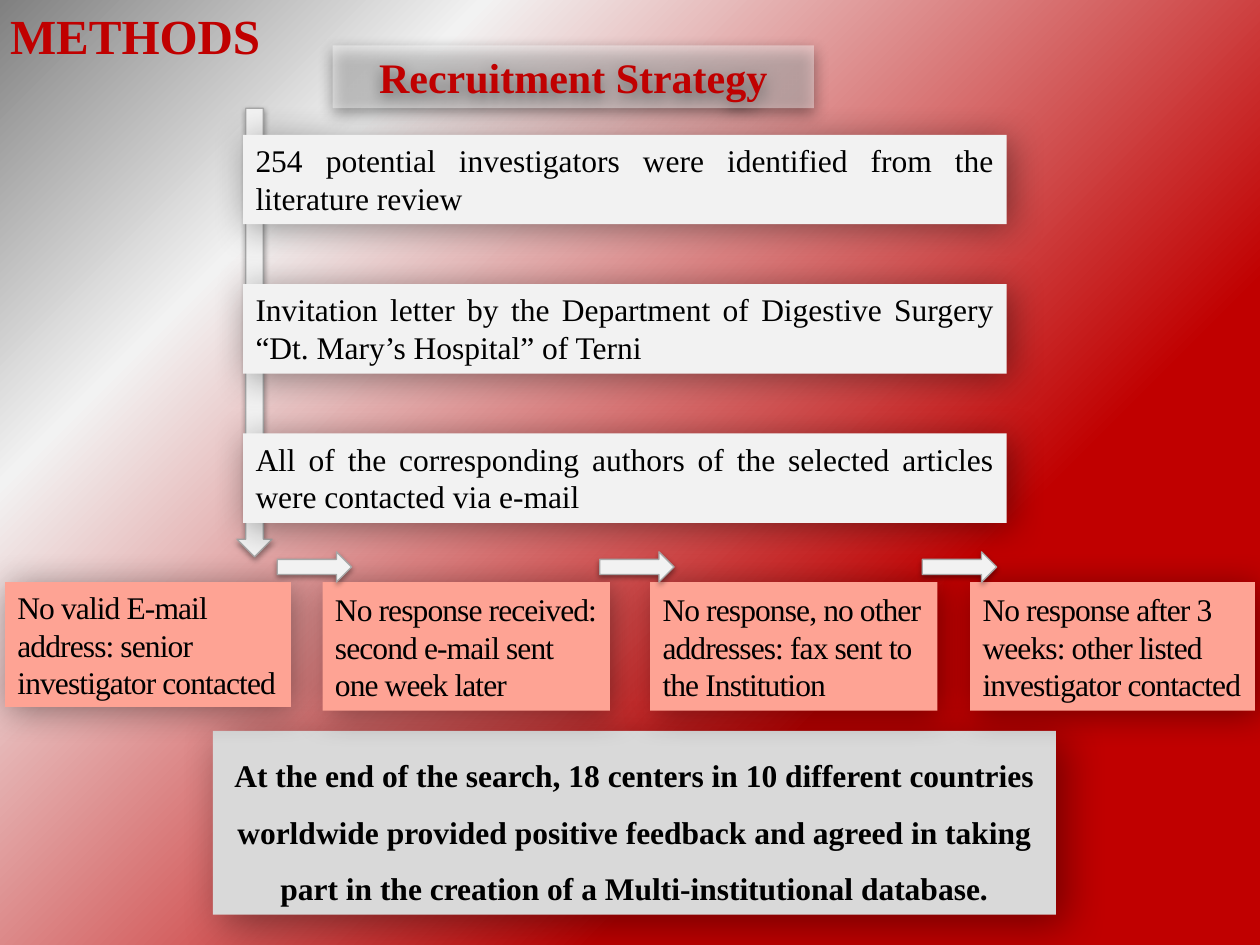
import copy
import pptx
import pptx.dml.color
import pptx.enum.shapes
import pptx.enum.text
import pptx.oxml
import pptx.oxml.ns
import pptx.util
from pptx.util import Inches

RGB = pptx.dml.color.RGBColor.from_string
SHAPE = pptx.enum.shapes.MSO_SHAPE
ALIGN = pptx.enum.text.PP_ALIGN
ANCHOR = pptx.enum.text.MSO_ANCHOR
qn = pptx.oxml.ns.qn

THEME = {
    "font": "Times New Roman",
    "red": "C00000", "ink": "000000", "light": "F2F2F2", "grey": "D9D9D9",
    "salmon": "FEA394", "white": "FFFFFF", "outline": "A6A6A6", "dark": "808080",
    "title": 28, "heading": 24, "body": 18,
}


def add_box(kind, box, fill, shadow, line=None):
    """Add a filled shape; shadow is (opacity %, blur pt, distance pt, angle)."""
    sp = s.shapes.add_shape(kind, *(Inches(v) for v in box))
    sp.fill.solid()
    sp.fill.fore_color.rgb = RGB(THEME[fill])
    if line:
        sp.line.color.rgb = RGB(THEME[line])
        sp.line.width = pptx.util.Pt(0.75)
    else:
        sp.line.fill.background()
    sp.shadow.inherit = False
    alpha, blur, dist, angle = shadow
    effects = sp._element.spPr.find(qn("a:effectLst"))
    effects.append(pptx.oxml.parse_xml(
        f'<a:outerShdw {pptx.oxml.ns.nsdecls("a")} blurRad="{pptx.util.Pt(blur)}" '
        f'dist="{pptx.util.Pt(dist)}" dir="{angle * 60000}" algn="tl" rotWithShape="0">'
        f'<a:srgbClr val="{THEME["ink"]}"><a:alpha val="{alpha * 1000}"/></a:srgbClr>'
        '</a:outerShdw>'))
    return sp


def write(sp, text, size="body", color="ink", bold=False, align=ALIGN.LEFT,
          anchor=ANCHOR.MIDDLE):
    tf = sp.text_frame
    tf.text = text
    tf.word_wrap = True
    tf.vertical_anchor = anchor
    p = tf.paragraphs[0]
    p.alignment = align
    r = p.runs[0]
    r.font.name = THEME["font"]
    r.font.size = pptx.util.Pt(THEME[size])
    r.font.bold = bold
    r.font.color.rgb = RGB(THEME[color])
    return p


prs = pptx.Presentation()
prs.slide_width, prs.slide_height = Inches(10), Inches(7.5)
s = prs.slides.add_slide(prs.slide_layouts[5])

# Diagonal background: red at bottom right, grey at top left
bg = s.background.fill
bg.gradient()
bg.gradient_angle = 135
stops = s._element.find(".//" + qn("a:gsLst"))
stops.append(copy.deepcopy(stops[0]))
for stop, (position, color) in zip(
        bg.gradient_stops, [(0.30, "red"), (0.78, "light"), (1, "dark")]):
    stop.position = position
    stop.color.rgb = RGB(THEME[color])

BOX_SHADOW = (40, 20, 3, 45)
ARROW_SHADOW = (38, 3.1, 1.6, 90)

# Long downward arrow behind the steps
down = add_box(SHAPE.RIGHT_ARROW, (0.24, 2.5, 3.56, 0.28), "light", ARROW_SHADOW, "outline")
down.rotation = 90

# Conclusion
sp = add_box(SHAPE.RECTANGLE, (1.69, 5.8, 6.69, 1.46), "grey", (40, 25, 8, 45))
p = write(sp, "At the end of the search, 18 centers in 10 different countries worldwide "
          "provided positive feedback and agreed in taking part in the creation of a "
          "Multi-institutional database.",
          bold=True, align=ALIGN.CENTER, anchor=ANCHOR.TOP)
p.line_spacing = 1.5

# Recruitment steps
steps = [
    "254 potential investigators were identified from the literature review",
    "Invitation letter by the Department of Digestive Surgery “Dt. Mary’s Hospital” of Terni",
    "All of the corresponding authors of the selected articles were contacted via e-mail",
]
for i, text in enumerate(steps):
    sp = add_box(SHAPE.RECTANGLE, (1.93, 1.07 + 1.185 * i, 6.06, 0.71), "light", BOX_SHADOW)
    write(sp, text, align=ALIGN.JUSTIFY, anchor=ANCHOR.TOP)

# Follow-up outcomes: left, width, height, text
outcomes = [
    (0.04, 2.27, 0.99, "No valid E-mail address: senior investigator contacted"),
    (2.56, 2.28, 1.02, "No response received: second e-mail sent one week later"),
    (5.16, 2.28, 1.02, "No response, no other addresses: fax sent to the Institution"),
    (7.7, 2.26, 1.02, "No response after 3 weeks: other listed investigator contacted"),
]
for left, width, height, text in outcomes:
    sp = add_box(SHAPE.RECTANGLE, (left, 4.62, width, height), "salmon", BOX_SHADOW)
    p = write(sp, text)
    p.runs[0].font._element.set("spc", "-50")

# Title and heading
title = s.shapes.title
title.left, title.top, title.width, title.height = (
    Inches(v) for v in (-0.02, 0.03, 2.57, 0.5))
write(title, "METHODS", "title", "red", bold=True)

heading = add_box(SHAPE.RECTANGLE, (2.64, 0.36, 3.82, 0.5), "white", (40, 9, 3, 90))
heading_color = heading._element.spPr.find(qn("a:solidFill"))[0]
heading_color.append(pptx.oxml.parse_xml(
    f'<a:alpha {pptx.oxml.ns.nsdecls("a")} val="40000"/>'))
write(heading, "Recruitment Strategy", "heading", "red", bold=True, align=ALIGN.CENTER)

# Arrows between the outcomes
for i in range(3):
    add_box(SHAPE.RIGHT_ARROW, (2.2 + 2.56 * i, 4.38, 0.59, 0.24), "light",
            ARROW_SHADOW, "outline")

prs.save("out.pptx")
